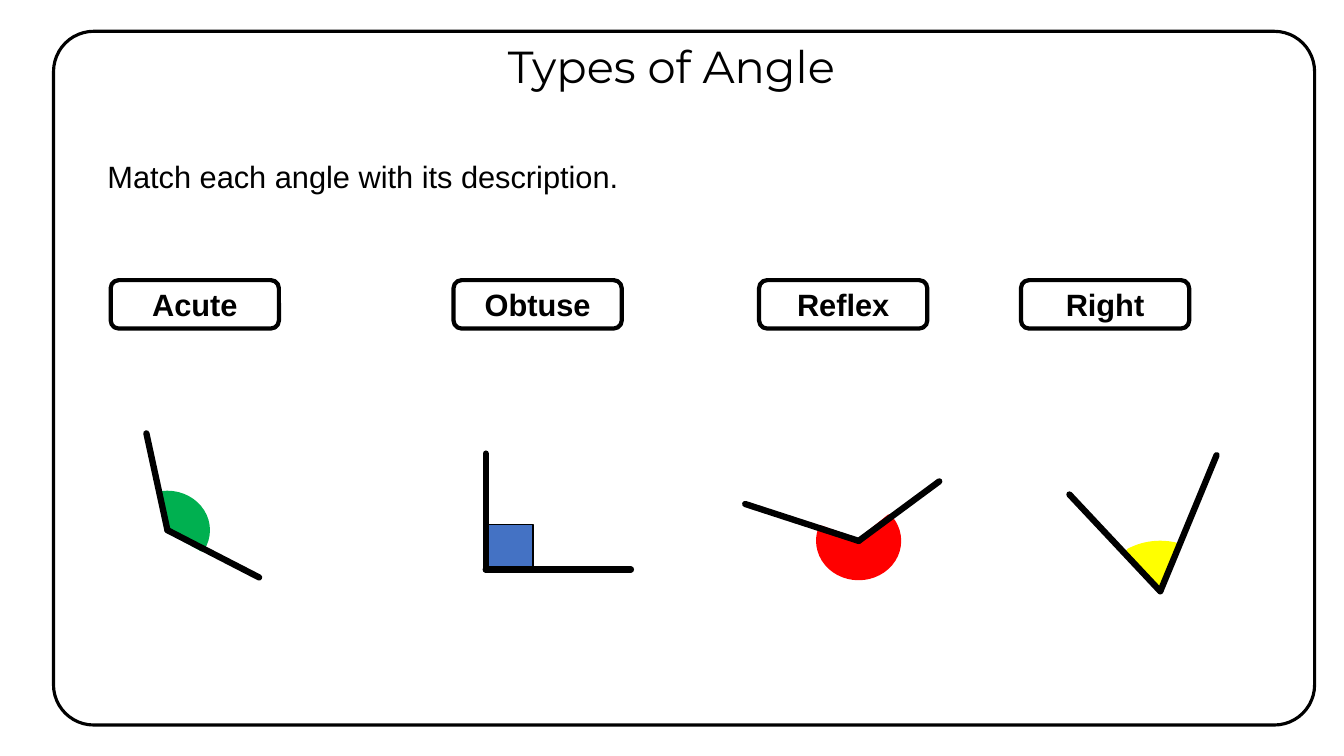
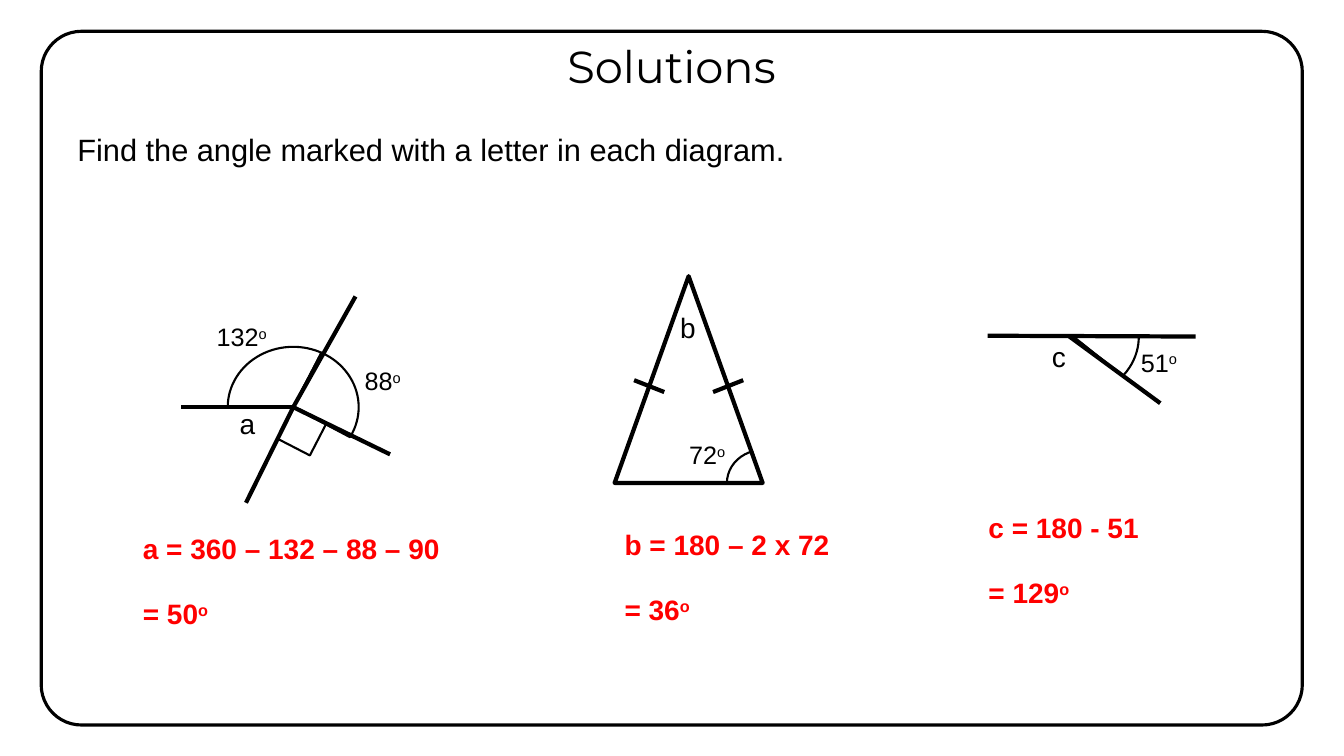
from math import atan2, degrees

from lxml.etree import SubElement
from pptx import Presentation
from pptx.dml.color import RGBColor
from pptx.enum.shapes import MSO_CONNECTOR, MSO_SHAPE as Shape
from pptx.enum.text import MSO_ANCHOR as Anchor, MSO_AUTO_SIZE, PP_ALIGN as Align
from pptx.oxml.ns import qn
from pptx.util import Cm, Pt

BLACK, RED, GREEN, YELLOW, BLUE = "000000", "FF0000", "00B050", "FFFF00", "4472C4"
TITLE_FONT, BODY_FONT = "Montserrat", "Arial"
LABEL_TOP, LABEL_SIZE = 7.06, (4.24, 1.22)
LABELS = [("Acute", 2.79), ("Obtuse", 11.43), ("Reflex", 19.13), ("Right", 25.73)]


def color(value):
    """Turn a hex string into a colour."""
    return RGBColor.from_string(value)


def cm_box(left, top, width, height):
    """Turn four centimetre numbers into lengths."""
    return Cm(left), Cm(top), Cm(width), Cm(height)


def format_para(para, size, font=BODY_FONT, ink=BLACK, bold=False):
    """Format every run of a paragraph."""
    for span in para.runs:
        span.font.size, span.font.name, span.font.bold = Pt(size), font, bold
        span.font.color.rgb = color(ink)


def write_degrees(para, text, size, **style):
    """Write a value followed by a raised degree sign."""
    para.text = text
    sign = para.add_run()
    sign.text = "o"
    format_para(para, size, **style)
    sign.font._element.set("baseline", "30000")


def add_text(slide, left, top, width, height):
    """Add an empty wrapping text box and return its frame."""
    frame = slide.shapes.add_textbox(*cm_box(left, top, width, height)).text_frame
    frame.word_wrap = True
    return frame


def add_line(slide, origin, start, end, weight=3, cap="flat"):
    """Draw a black line between two points given from an origin."""
    x, y = origin
    line = slide.shapes.add_connector(
        MSO_CONNECTOR.STRAIGHT,
        Cm(x + start[0]), Cm(y + start[1]), Cm(x + end[0]), Cm(y + end[1]))
    line.line.color.rgb = color(BLACK)
    line.line.width = Pt(weight)
    properties = line.element.spPr
    properties.find(qn("a:ln")).set("cap", cap)
    SubElement(properties, qn("a:effectLst"))


def add_outline(slide, kind, box, weight, fill=None, ink=BLACK):
    """Add a preset shape with an outline and an optional fill."""
    shape = slide.shapes.add_shape(kind, *cm_box(*box))
    shape.shadow.inherit = False
    if fill:
        shape.fill.solid()
        shape.fill.fore_color.rgb = color(fill)
    else:
        shape.fill.background()
    shape.line.color.rgb = color(ink)
    shape.line.width = Pt(weight)
    return shape


def add_sector(slide, center, radii, first, second, weight=1.5, fill=None):
    """Draw the sector running clockwise from the first arm to the second."""
    (x, y), (rx, ry) = center, radii
    sector = add_outline(slide, Shape.PIE, (x - rx, y - ry, 2 * rx, 2 * ry),
                         weight, fill, fill or BLACK)
    for index, (dx, dy) in enumerate((first, second)):
        angle = degrees(atan2(dy / ry, dx / rx)) % 360
        sector.adjustments[index] = angle * 0.6


def add_arms(slide, vertex, *arms, weight=3, cap="flat"):
    """Draw lines that leave one vertex."""
    for arm in arms:
        add_line(slide, vertex, (0, 0), arm, weight, cap)


def add_marks(slide, origin, letter, values):
    """Place the unknown letter and the known angles of a diagram."""
    x, y = origin
    text, left, top = letter
    para = add_text(slide, x + left, y + top, 2.3, 1.12).paragraphs[0]
    para.text = text
    format_para(para, 20)
    for text, left, top in values:
        frame = add_text(slide, x + left, y + top, 2.3, 1.02)
        write_degrees(frame.paragraphs[0], text, 18)


def add_page(deck, title, frame_left, prompt, prompt_box):
    """Add a page with its rounded frame, title and prompt."""
    page = deck.slides.add_slide(deck.slide_layouts[5])
    border = add_outline(page, Shape.ROUNDED_RECTANGLE,
                         (frame_left, 0.79, 31.78, 17.48), 2.25)
    border.adjustments[0] = 0.058
    heading = page.shapes.title
    heading.left, heading.top, heading.width, heading.height = cm_box(10.03, 0.84, 13.79, 1.63)
    frame = heading.text_frame
    frame.text = title
    frame.auto_size = MSO_AUTO_SIZE.NONE
    frame.vertical_anchor = Anchor.MIDDLE
    frame.paragraphs[0].alignment = Align.CENTER
    format_para(frame.paragraphs[0], 32, TITLE_FONT)
    para = add_text(page, *prompt_box).paragraphs[0]
    para.text = prompt
    format_para(para, 22)
    return page


def add_label(page, text, left):
    """Add one rounded name label."""
    label = add_outline(page, Shape.ROUNDED_RECTANGLE, (left, LABEL_TOP, *LABEL_SIZE), 3)
    frame = label.text_frame
    frame.text = text
    frame.vertical_anchor = Anchor.MIDDLE
    frame.paragraphs[0].alignment = Align.CENTER
    format_para(frame.paragraphs[0], 22, bold=True)


def add_angle(page, vertex, first, second, radii, fill):
    """Draw a coloured angle with thick arms."""
    add_sector(page, vertex, radii, first, second, 3, fill)
    add_arms(page, vertex, first, second, weight=4.5, cap="rnd")


def add_right_angle(page, vertex):
    """Draw a right angle marked with a square."""
    x, y = vertex
    add_outline(page, Shape.RECTANGLE, (x, y - 1.14, 1.19, 1.14), 1, BLUE)
    add_arms(page, vertex, (0, -2.92), (3.66, 0), weight=4.5, cap="rnd")


def add_point_diagram(page, vertex):
    """Draw four angles around a point."""
    left, upper, right, lower = (-2.82, 0), (1.57, -2.79), (2.44, 1.19), (-1.19, 2.41)
    for first, second in ((left, upper), (upper, right)):
        add_sector(page, vertex, (1.65, 1.52), first, second)
    add_arms(page, vertex, left, upper, right, lower)
    x, y = vertex
    square = add_outline(page, Shape.RECTANGLE, (x - 0.23, y + 0.15, 0.91, 0.91), 1.5)
    square.rotation = 27.3
    add_marks(page, vertex, ("a", -1.6, -0.15),
              [("88", 1.55, -1.17), ("132", -2.18, -2.28)])


def add_triangle_diagram(page, corner):
    """Draw an isosceles triangle with equal sides ticked."""
    x, y = corner
    width, height = 3.73, 5.21
    add_sector(page, (x + width, y + height), (0.9, 0.83), (-width, 0), (-width / 2, -height))
    add_outline(page, Shape.ISOSCELES_TRIANGLE, (x, y, width, height), 3)
    add_line(page, corner, (0.49, 2.62), (1.25, 2.92))
    add_line(page, corner, (width - 0.49, 2.62), (width - 1.25, 2.92))
    add_marks(page, corner, ("b", 1.4, 0.74), [("72", 1.63, 3.99)])


def add_straight_diagram(page, vertex):
    """Draw two angles on a straight line."""
    x, y = vertex
    right, slope = (3.18, 0), (2.29, 1.68)
    add_sector(page, (x + 0.1, y), (1.65, 1.52), right, slope)
    add_arms(page, vertex, slope)
    add_line(page, vertex, (-2.06, -0.02), right)
    add_marks(page, vertex, ("c", -0.69, -0.06), [("51", 1.55, 0.14)])


def add_answer(page, left, top, working, result):
    """Write the working and the resulting angle."""
    frame = add_text(page, left, top, 8.08, 2.82)
    frame.text = working
    format_para(frame.paragraphs[0], 20, ink=RED, bold=True)
    para = frame.add_paragraph()
    para.space_before = Pt(23)
    write_degrees(para, result, 20, ink=RED, bold=True)


def build_types(deck):
    """Build the page that matches angles with names."""
    page = add_page(deck, "Types of Angle", 1.35,
                    "Match each angle with its description.", (2.46, 3.86, 25.93, 1.19))
    for text, left in LABELS:
        add_label(page, text, left)
    add_angle(page, (4.22, 13.36), (-0.53, -2.44), (2.31, 1.19), (1.02, 0.94), GREEN)
    add_right_angle(page, (12.24, 14.35))
    add_angle(page, (21.64, 13.63), (2.03, -1.5), (-2.86, -0.93), (1.02, 0.94), RED)
    add_angle(page, (29.24, 14.9), (-2.29, -2.44), (1.42, -3.43), (1.46, 1.22), YELLOW)


def build_solutions(deck):
    """Build the page of solved angle diagrams."""
    page = add_page(deck, "Solutions", 1.04,
                    "Find the angle marked with a letter in each diagram.",
                    (1.7, 3.18, 29.31, 1.19))
    add_point_diagram(page, (7.39, 10.26))
    add_triangle_diagram(page, (15.49, 6.96))
    add_straight_diagram(page, (26.95, 8.48))
    add_answer(page, 3.35, 13.26, "a = 360 – 132 – 88 – 90", "= 50")
    add_answer(page, 15.49, 13.16, "b = 180 – 2 x 72", "= 36")
    add_answer(page, 24.66, 12.73, "c = 180 - 51", "= 129")


def main():
    """Build and save the deck."""
    deck = Presentation()
    deck.slide_width, deck.slide_height = Cm(33.87), Cm(19.05)
    build_types(deck)
    build_solutions(deck)
    deck.save("out.pptx")


if __name__ == "__main__":
    main()
